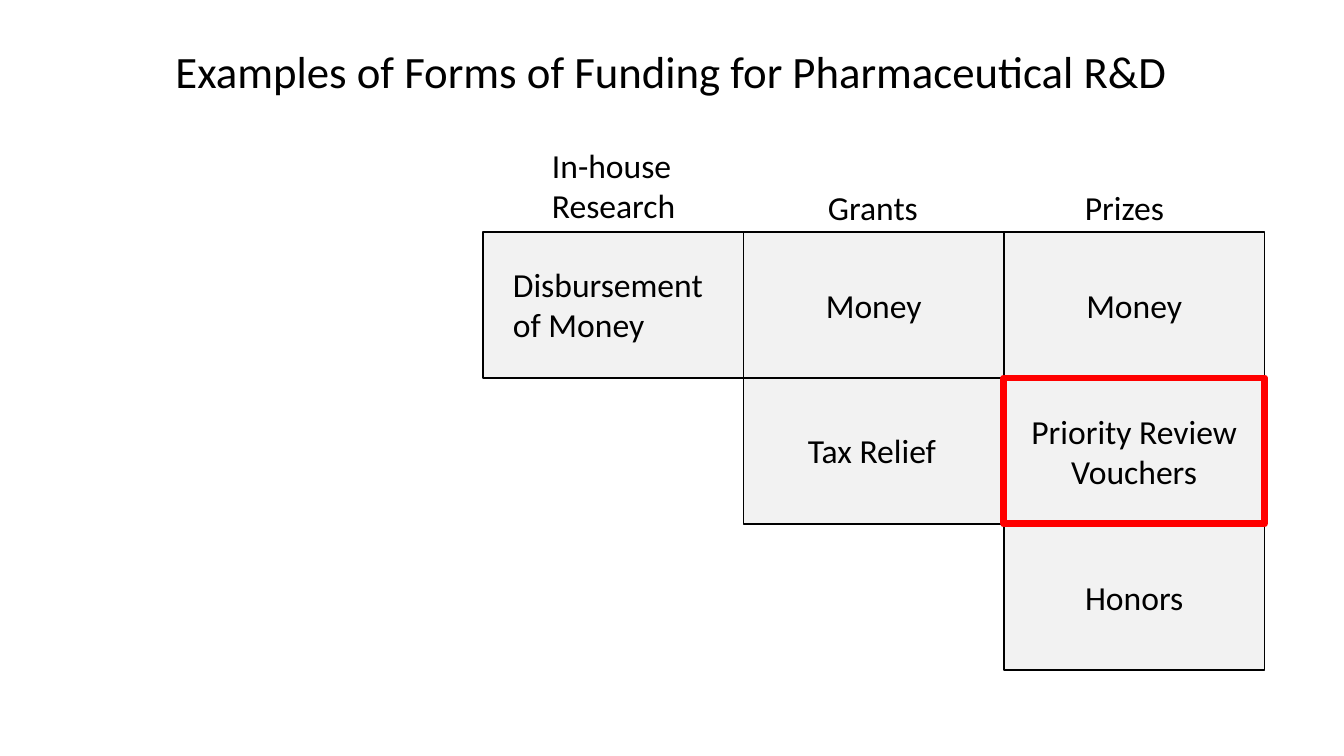
from pptx import Presentation
from pptx.dml.color import RGBColor
from pptx.enum.shapes import MSO_SHAPE
from pptx.enum.text import MSO_ANCHOR, MSO_AUTO_SIZE, PP_ALIGN
from pptx.util import Pt

RECT = MSO_SHAPE.RECTANGLE
MIDDLE = MSO_ANCHOR.MIDDLE
CENTER, LEFT = PP_ALIGN.CENTER, PP_ALIGN.LEFT
FIT = MSO_AUTO_SIZE.SHAPE_TO_FIT_TEXT

TITLE = "Examples of Forms of Funding for Pharmaceutical R&D"
# column, row, text
CELLS = [
    (0, 0, ""),
    (1, 0, "Money"),
    (2, 0, "Money"),
    (1, 1, ""),
    (2, 1, "Priority Review Vouchers"),
    (2, 2, "Honors"),
]
HIGHLIGHT = (2, 1)
# left, top, width, height in px, then lines
LABELS = [
    (818, 182, 111, 50, ["Grants"]),
    (542, 140, 148, 92, ["In-house", "Research"]),
    (1075, 182, 101, 50, ["Prizes"]),
    (503, 259, 220, 92, ["Disbursement", "of Money"]),
    (798, 425, 150, 50, ["Tax Relief"]),
]
COLORS = {"text": "000000", "cell": "F2F2F2", "border": "000000", "highlight": "FF0000"}
FONT = "Calibri"
GRID_LEFT, GRID_TOP, CELL_W, CELL_H = 483, 232, 260.5, 146


def px(n):
    return round(n * 914400 / 100.8)


def rgb(name):
    return RGBColor.from_string(COLORS[name])


def write(tf, lines, size, align):
    for i, line in enumerate(lines):
        p = tf.paragraphs[0] if i == 0 else tf.add_paragraph()
        p.text = line
        p.alignment = align
        p.font.name = FONT
        p.font.size = Pt(size)
        p.font.color.rgb = rgb("text")


def add_cell(s, col, row, border, width):
    sp = s.shapes.add_shape(RECT, px(GRID_LEFT + col * CELL_W), px(GRID_TOP + row * CELL_H),
                            px(CELL_W), px(CELL_H))
    sp.shadow.inherit = False
    sp.line.color.rgb = rgb(border)
    sp.line.width = Pt(width)
    return sp


prs = Presentation()
prs.slide_width, prs.slide_height = px(1344), px(756)
s = prs.slides.add_slide(prs.slide_layouts[5])

title = s.shapes.title
title.left, title.top, title.width, title.height = px(92), px(1), px(1159), px(146)
title.text_frame.vertical_anchor = MIDDLE
write(title.text_frame, [TITLE], 32, CENTER)
title.text_frame.paragraphs[0].line_spacing = 0.9

for col, row, text in CELLS:
    sp = add_cell(s, col, row, "border", 1)
    sp.fill.solid()
    sp.fill.fore_color.rgb = rgb("cell")
    if text:
        sp.text_frame.vertical_anchor = MIDDLE
        write(sp.text_frame, [text], 24, CENTER)

for left, top, width, height, lines in LABELS:
    tf = s.shapes.add_textbox(px(left), px(top), px(width), px(height)).text_frame
    tf.word_wrap = False
    tf.auto_size = FIT
    write(tf, lines, 24, LEFT)

add_cell(s, *HIGHLIGHT, "highlight", 5).fill.background()

prs.save("out.pptx")
